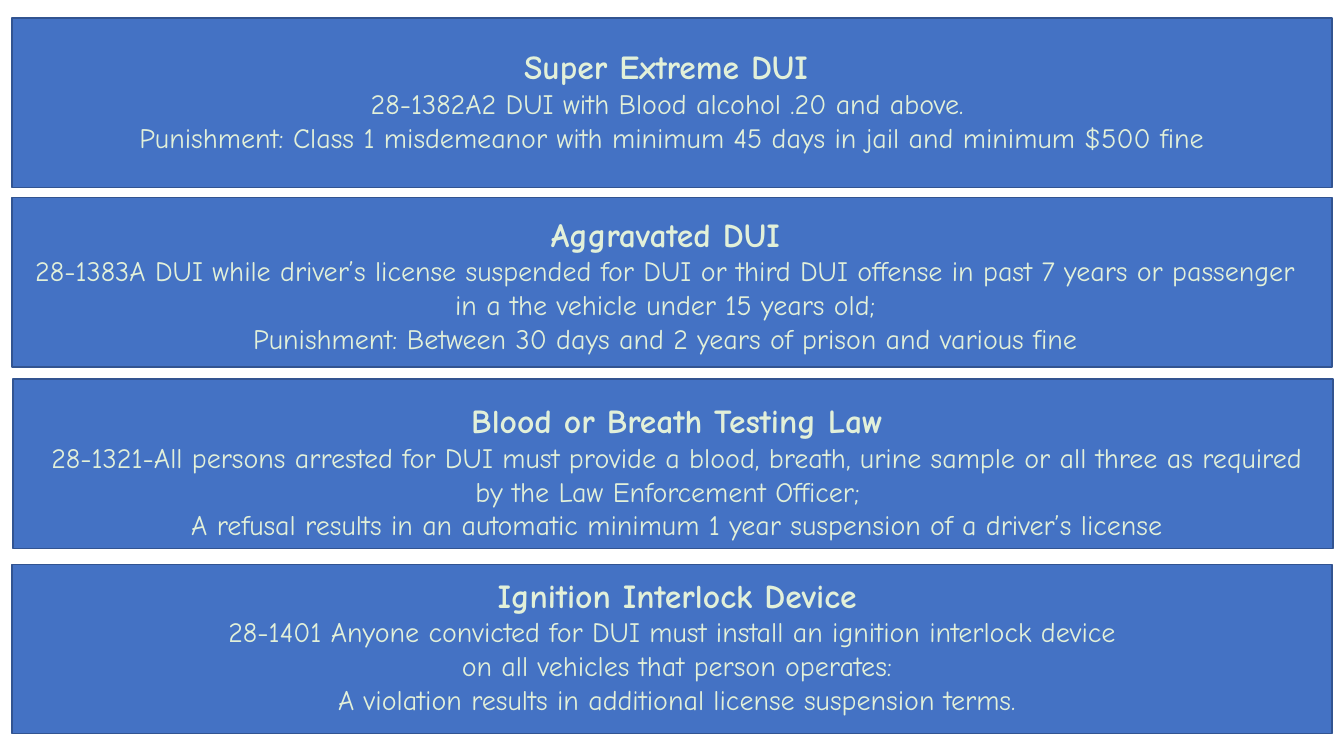
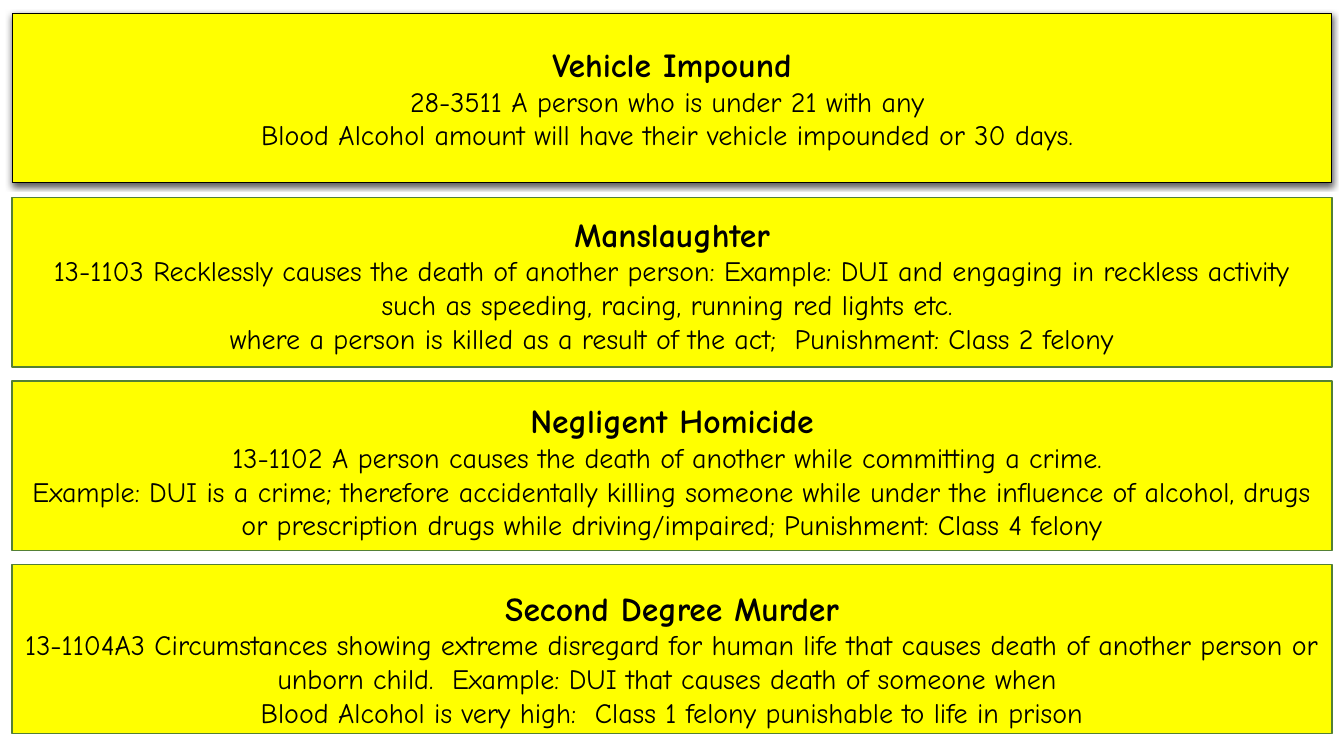
from dataclasses import dataclass
from typing import Optional

from lxml import etree
from pptx import Presentation
from pptx.dml.color import RGBColor
from pptx.enum.shapes import MSO_SHAPE
from pptx.enum.text import MSO_ANCHOR, MSO_AUTO_SIZE, PP_ALIGN
from pptx.oxml.ns import qn
from pptx.util import Inches, Pt

RECTANGLE = MSO_SHAPE.RECTANGLE
MIDDLE, TOP = MSO_ANCHOR.MIDDLE, MSO_ANCHOR.TOP
CENTER = PP_ALIGN.CENTER
GROW = MSO_AUTO_SIZE.SHAPE_TO_FIT_TEXT
BLANK_LAYOUT = 6


@dataclass(frozen=True)
class Palette:
    fill: str
    line: str
    text: str


@dataclass(frozen=True)
class Theme:
    font: str = "Comic Neue"
    heading_size: int = 24
    body_size: int = 20
    black: str = "000000"
    traffic: Palette = Palette("4472C4", "325491", "E2F0D9")
    felony: Palette = Palette("FFFF00", "538035", "000000")


THEME = Theme()

BAND_LEFT, BAND_WIDTH, BAND_HEIGHT = 0.12, 13.09, 1.68
FIRST_TOP, BAND_PITCH = 0.14, 1.82


@dataclass(frozen=True)
class Law:
    """One law; without a text_box its wording sits inside a raised band."""
    heading: str
    details: tuple
    text_box: Optional[tuple] = None
    shift: tuple = (0, 0)


TRAFFIC_LAWS = (
    Law("Super Extreme DUI ",
        ("28-1382A2 DUI with Blood alcohol .20 and above. ",
         "Punishment: Class 1 misdemeanor with minimum 45 days in jail and minimum $500 fine"),
        (0.12, 0.41, 13.09, 1.51), (0, 0.04)),
    Law("Aggravated DUI",
        ("28-1383A DUI while driver’s license suspended for DUI or third DUI offense in past "
         "7 years or passenger in a the vehicle under 15 years old;",
         "Punishment: Between 30 days and 2 years of prison and various fine"),
        (0.12, 2.07, 12.96, 1.85)),
    Law("Blood or Breath Testing Law",
        ("28-1321-All persons arrested for DUI must provide a blood, breath, urine sample or "
         "all three as required by the Law Enforcement Officer;  ",
         "A refusal results in an automatic minimum 1 year suspension of a driver’s license"),
        (0.29, 3.92, 12.85, 1.85), (0.01, -0.02)),
    Law("Ignition Interlock Device",
        ("28-1401 Anyone convicted for DUI must install an ignition interlock device ",
         "on all vehicles that person operates:",
         "A violation results in additional license suspension terms."),
        (0.22, 5.65, 12.99, 1.85)),
)

FELONY_LAWS = (
    Law("Vehicle Impound",
        ("28-3511 A person who is under 21 with any ",
         "Blood Alcohol amount will have their vehicle impounded or 30 days. "),
        shift=(0, -0.01)),
    Law("Manslaughter",
        ("13-1103 Recklessly causes the death of another person: Example: DUI and engaging in "
         "reckless activity such as speeding, racing, running red lights etc. ",
         "where a person is killed as a result of the act;  Punishment: Class 2 felony"),
        (0.12, 2.07, 13.09, 1.85)),
    Law("Negligent Homicide",
        ("13-1102 A person causes the death of another while committing a crime. ",
         "Example: DUI is a crime; therefore accidentally killing someone while under the "
         "influence of alcohol, drugs or prescription drugs while driving/impaired; "
         "Punishment: Class 4 felony"),
        (0.12, 3.92, 13.09, 1.85)),
    Law("Second Degree Murder",
        ("13-1104A3 Circumstances showing extreme disregard for human life that causes death "
         "of another person or unborn child.  Example: DUI that causes death of someone when ",
         "Blood Alcohol is very high:  Class 1 felony punishable to life in prison"),
        (0.12, 5.78, 13.09, 1.85)),
)


def add_band(slide, index, law, palette):
    left = BAND_LEFT + law.shift[0]
    top = FIRST_TOP + index * BAND_PITCH + law.shift[1]
    band = slide.shapes.add_shape(RECTANGLE, Inches(left), Inches(top),
                                  Inches(BAND_WIDTH), Inches(BAND_HEIGHT))
    band.shadow.inherit = False
    band.fill.solid()
    band.fill.fore_color.rgb = RGBColor.from_string(palette.fill)
    band.line.color.rgb = RGBColor.from_string(palette.line)
    band.line.width = Pt(1)
    return band


def raise_band(band):
    """Give the band a thin black outline and a soft shadow below it."""
    band.line.color.rgb = RGBColor.from_string(THEME.black)
    band.line.width = Pt(0.75)
    effects = band._element.spPr.find(qn("a:effectLst"))
    shadow = etree.SubElement(effects, qn("a:outerShdw"), blurRad=str(Pt(4.5)),
                              dist=str(Pt(1.5)), dir="5400000", algn="ctr", rotWithShape="0")
    color = etree.SubElement(shadow, qn("a:srgbClr"), val=THEME.black)
    etree.SubElement(color, qn("a:alpha"), val="63000")


def write_law(text_frame, law, color, anchor):
    text_frame.word_wrap = True
    text_frame.vertical_anchor = anchor
    for index, line in enumerate((law.heading, *law.details)):
        paragraph = text_frame.add_paragraph() if index else text_frame.paragraphs[0]
        paragraph.alignment = CENTER
        run = paragraph.add_run()
        run.text = line
        run.font.name = THEME.font
        run.font.size = Pt(THEME.body_size if index else THEME.heading_size)
        run.font.bold = index == 0
        run.font.color.rgb = RGBColor.from_string(color)


def add_text_box(slide, law, color):
    text_box = slide.shapes.add_textbox(*map(Inches, law.text_box))
    write_law(text_box.text_frame, law, color, TOP)
    text_box.text_frame.auto_size = GROW


def add_law_slide(presentation, laws, palette):
    slide = presentation.slides.add_slide(presentation.slide_layouts[BLANK_LAYOUT])
    for index, law in enumerate(laws):
        band = add_band(slide, index, law, palette)
        if law.text_box is None:
            raise_band(band)
            write_law(band.text_frame, law, palette.text, MIDDLE)
    for law in laws:
        if law.text_box is not None:
            add_text_box(slide, law, palette.text)


def main():
    presentation = Presentation()
    presentation.slide_width = Inches(13.33)
    presentation.slide_height = Inches(7.5)
    add_law_slide(presentation, TRAFFIC_LAWS, THEME.traffic)
    add_law_slide(presentation, FELONY_LAWS, THEME.felony)
    presentation.save("out.pptx")


if __name__ == "__main__":
    main()
